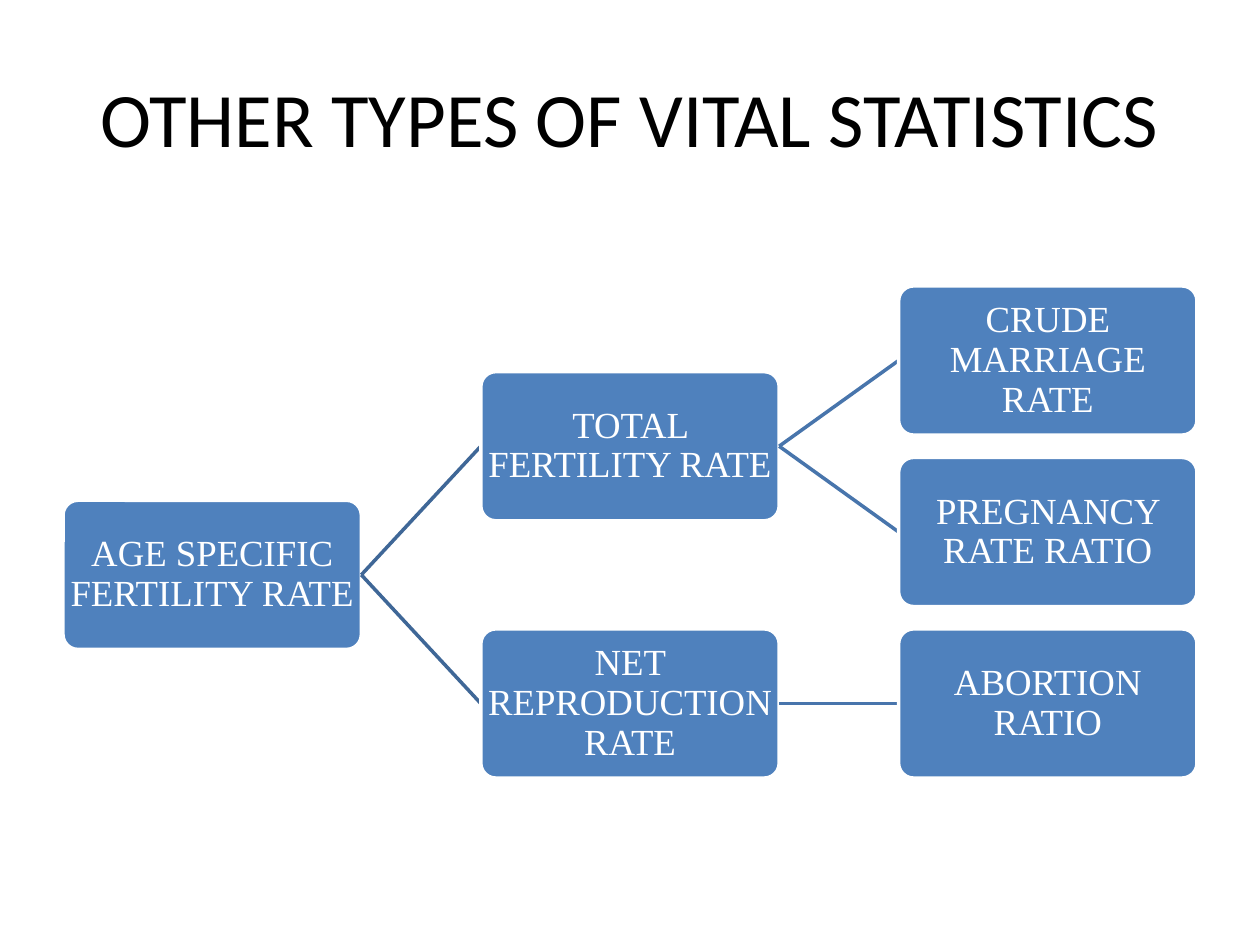
from pptx import Presentation
from pptx.dml.color import RGBColor
from pptx.enum.shapes import MSO_CONNECTOR as Connector, MSO_SHAPE as Shape
from pptx.enum.text import MSO_ANCHOR as Anchor, PP_ALIGN as Align
from pptx.oxml.ns import qn
from pptx.util import Pt
from lxml.etree import SubElement

# Content: each node is (label, children)
TITLE = "OTHER TYPES OF VITAL STATISTICS"
TREE = ("AGE SPECIFIC FERTILITY RATE", [
    ("TOTAL FERTILITY RATE", [
        ("CRUDE MARRIAGE RATE", []),
        ("PREGNANCY RATE RATIO", []),
    ]),
    ("NET REPRODUCTION RATE", [
        ("ABORTION RATIO", []),
    ]),
])

COLORS = {"title": "000000", "box": "4F81BD", "box_text": "FFFFFF", "border": "FFFFFF"}
LINK_COLORS = ["3F6797", "4875AC"]  # by depth of the parent

# Layout in points
LEFT, FIRST_CENTER = 36, 206
BOX_WIDTH, BOX_HEIGHT = 170.5, 85.25
COLUMN_STEP, ROW_STEP = 238.75, 98
INSET = 0.7


def color(value):
    return RGBColor.from_string(value)


def place(node, leaf_rows, depth=0):
    """Leaves take rows in turn; a parent sits midway between its children."""
    label, children = node
    placed = [place(child, leaf_rows, depth + 1) for child in children]
    if placed:
        center = (placed[0]["center"] + placed[-1]["center"]) / 2
    else:
        center = FIRST_CENTER + ROW_STEP * next(leaf_rows)
    return {"label": label, "depth": depth, "left": LEFT + COLUMN_STEP * depth,
            "center": center, "children": placed}


def add_run(paragraph, text, font_name, size, text_color):
    paragraph.alignment = Align.CENTER
    run = paragraph.add_run()
    run.text = text
    run.font.name = font_name
    run.font.size = Pt(size)
    run.font.color.rgb = color(text_color)


def add_box(slide, node):
    box = slide.shapes.add_shape(
        Shape.ROUNDED_RECTANGLE, Pt(node["left"]), Pt(node["center"] - BOX_HEIGHT / 2),
        Pt(BOX_WIDTH), Pt(BOX_HEIGHT))
    box.adjustments[0] = 0.1
    box.shadow.inherit = False
    box.fill.solid()
    box.fill.fore_color.rgb = color(COLORS["box"])
    box.line.color.rgb = color(COLORS["border"])
    box.line.width = Pt(2)
    frame = box.text_frame
    frame.word_wrap = True
    frame.vertical_anchor = Anchor.MIDDLE
    frame.margin_left = frame.margin_right = Pt(INSET)
    frame.margin_top = frame.margin_bottom = Pt(INSET)
    paragraph = frame.paragraphs[0]
    paragraph.line_spacing = 0.9
    add_run(paragraph, node["label"], "Times New Roman", 21, COLORS["box_text"])


def add_link(slide, parent, child):
    link = slide.shapes.add_connector(
        Connector.STRAIGHT, Pt(parent["left"] + BOX_WIDTH), Pt(parent["center"]),
        Pt(child["left"]), Pt(child["center"]))
    link.line.color.rgb = color(LINK_COLORS[parent["depth"]])
    link.line.width = Pt(2)
    SubElement(link._element.spPr, qn("a:effectLst"))


def draw(slide, node):
    add_box(slide, node)
    for child in node["children"]:
        add_link(slide, node, child)
        draw(slide, child)


def main():
    presentation = Presentation()
    presentation.slide_width, presentation.slide_height = Pt(720), Pt(540)
    slide = presentation.slides.add_slide(presentation.slide_layouts[5])

    # Title
    title = slide.shapes.title
    title.left, title.top, title.width, title.height = Pt(36), Pt(21.6), Pt(648), Pt(90)
    title.text_frame.vertical_anchor = Anchor.MIDDLE
    add_run(title.text_frame.paragraphs[0], TITLE, "Calibri", 44, COLORS["title"])

    # Hierarchy
    draw(slide, place(TREE, iter(range(3))))
    presentation.save("out.pptx")


if __name__ == "__main__":
    main()
